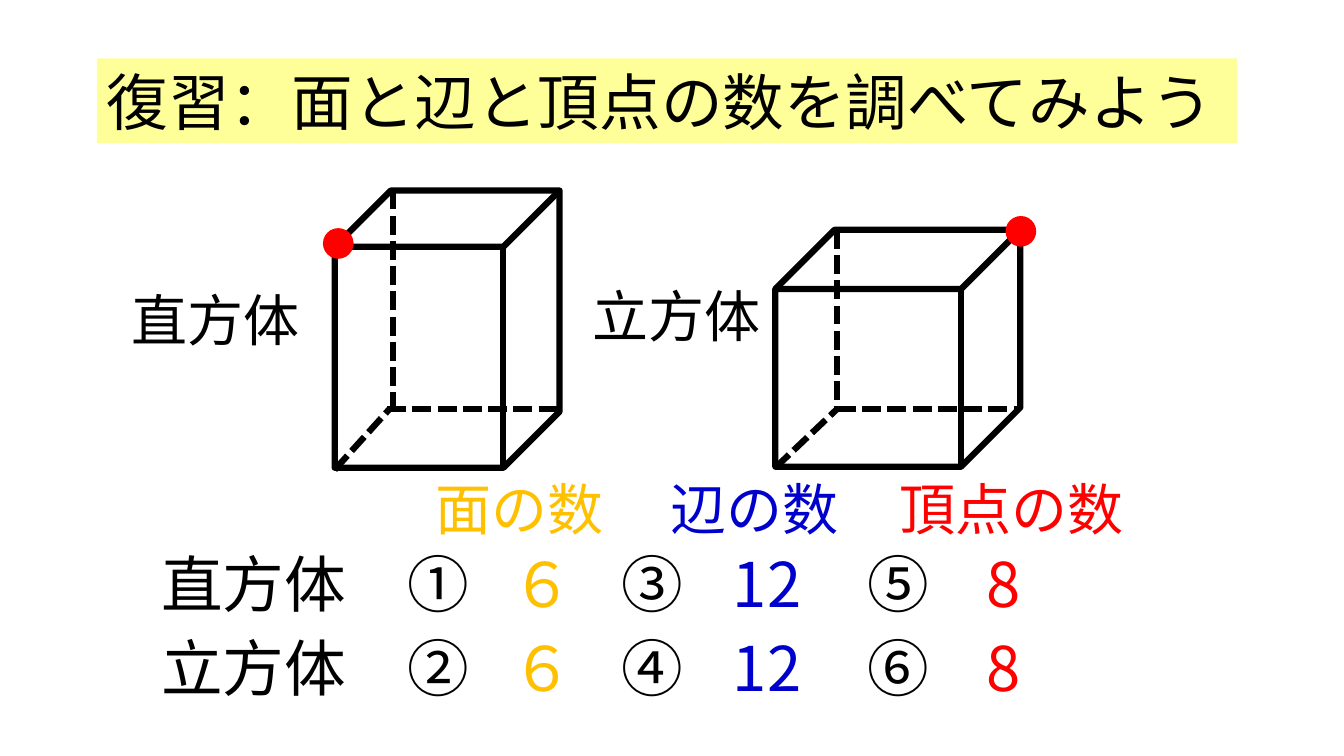
import dataclasses

import lxml.etree
import pptx
import pptx.dml.color
import pptx.enum.dml
import pptx.enum.shapes
import pptx.enum.text
import pptx.oxml.ns
import pptx.util

Inches = pptx.util.Inches
Pt = pptx.util.Pt
Preset = pptx.enum.shapes.MSO_SHAPE
qn = pptx.oxml.ns.qn


@dataclasses.dataclass(frozen=True)
class Theme:
    font: str = "Noto Sans CJK JP"
    ink: str = "000000"
    faces: str = "FFC000"
    edges: str = "0000CC"
    vertices: str = "FF0000"
    title_band: str = "FFFF99"
    large: int = 44
    medium: int = 40
    edge_width: float = 4.5
    dot_width: float = 1


class Board:
    def __init__(self, slide, theme):
        self.slide = slide
        self.theme = theme

    def paint(self, fill, color):
        fill.solid()
        fill.fore_color.rgb = pptx.dml.color.RGBColor.from_string(color)

    def set_text(self, shape, text, size, color, tabs=()):
        frame = shape.text_frame
        frame.word_wrap = bool(tabs)
        frame.vertical_anchor = pptx.enum.text.MSO_ANCHOR.MIDDLE
        frame.margin_top = frame.margin_bottom = 0
        paragraph = frame.paragraphs[0]
        paragraph.alignment = pptx.enum.text.PP_ALIGN.LEFT
        run = paragraph.add_run()
        run.text = text
        run.font.name = self.theme.font
        run.font.size = Pt(size)
        self.paint(run.font.fill, color)
        east_asian = lxml.etree.SubElement(run.font._element, qn("a:ea"))
        east_asian.set("typeface", self.theme.font)
        if tabs:
            stops = lxml.etree.SubElement(paragraph._p.get_or_add_pPr(), qn("a:tabLst"))
            for position in tabs:
                stop = lxml.etree.SubElement(stops, qn("a:tab"))
                stop.set("pos", str(Inches(position)))
                stop.set("algn", "l")

    def label(self, text, left, top, width, height, size, color, tabs=()):
        box = self.slide.shapes.add_textbox(*map(Inches, (left, top, width, height)))
        self.set_text(box, text, size, color, tabs)

    def shape(self, preset, left, top, width, height, fill=None, line=None, weight=0):
        shape = self.slide.shapes.add_shape(preset, *map(Inches, (left, top, width, height)))
        shape.shadow.inherit = False
        if fill:
            self.paint(shape.fill, fill)
        else:
            shape.fill.background()
        if line:
            self.paint(shape.line.fill, line)
            shape.line.width = Pt(weight)
        else:
            shape.line.fill.background()
        return shape

    def solid(self, left, top, width, height):
        self.shape(Preset.CUBE, left, top, width, height,
                   line=self.theme.ink, weight=self.theme.edge_width)

    def vertex(self, left, top):
        color = self.theme.vertices
        self.shape(Preset.OVAL, left, top, 0.29, 0.29, color, color, self.theme.dot_width)

    def hidden_edge(self, start, end):
        edge = self.slide.shapes.add_connector(
            pptx.enum.shapes.MSO_CONNECTOR.STRAIGHT, *map(Inches, (*start, *end)))
        self.paint(edge.line.fill, self.theme.ink)
        edge.line.width = Pt(self.theme.edge_width)
        edge.line.dash_style = pptx.enum.dml.MSO_LINE.SQUARE_DOT
        lxml.etree.SubElement(edge._element.spPr, qn("a:effectLst"))


def main():
    deck = pptx.Presentation()
    deck.slide_width = Inches(13.33)
    deck.slide_height = Inches(7.5)
    theme = Theme()
    board = Board(deck.slides.add_slide(deck.slide_layouts[6]), theme)

    board.solid(3.32, 1.89, 2.23, 2.75)
    board.solid(7.69, 2.28, 2.43, 2.35)

    answers = [("６", 4.97, 0.82, theme.faces), ("12", 7.17, 1.07, theme.edges),
               ("8", 9.69, 0.64, theme.vertices)]
    question_rows = ["直方体\t①\t③\t⑤", "立方体\t②\t④\t⑥"]
    for index, questions in enumerate(question_rows):
        top = 5.36 + 0.84 * index
        board.label(questions, 1.5, top, 7.99, 0.84, theme.large, theme.ink,
                    tabs=(2.44, 4.57, 7.01))
        for count, left, width, color in answers:
            board.label(count, left, top, width, 0.84, theme.large, color)

    title = board.shape(Preset.RECTANGLE, 0.96, 0.58, 11.31, 0.84, theme.title_band)
    board.set_text(title, "復習：面と辺と頂点の数を調べてみよう", theme.large, theme.ink)

    hidden_edges = [
        ((8.3, 2.28), (8.3, 4.06)), ((7.69, 4.64), (8.3, 4.06)), ((8.3, 4.06), (10.12, 4.06)),
        ((3.9, 1.89), (3.9, 4.06)), ((3.32, 4.66), (3.87, 4.05)), ((3.84, 4.06), (5.55, 4.06)),
    ]
    for start, end in hidden_edges:
        board.hidden_edge(start, end)

    board.vertex(9.98, 2.15)
    board.vertex(3.21, 2.27)

    captions = [
        ("直方体", 1.21, 2.78, 1.88, theme.ink),
        ("立方体", 5.78, 2.74, 1.88, theme.ink),
        ("面の数", 4.22, 4.66, 1.88, theme.faces),
        ("辺の数", 6.55, 4.66, 1.88, theme.edges),
        ("頂点の数", 8.82, 4.66, 2.45, theme.vertices),
    ]
    for text, left, top, width, color in captions:
        board.label(text, left, top, width, 0.77, theme.medium, color)

    deck.save("out.pptx")


if __name__ == "__main__":
    main()
